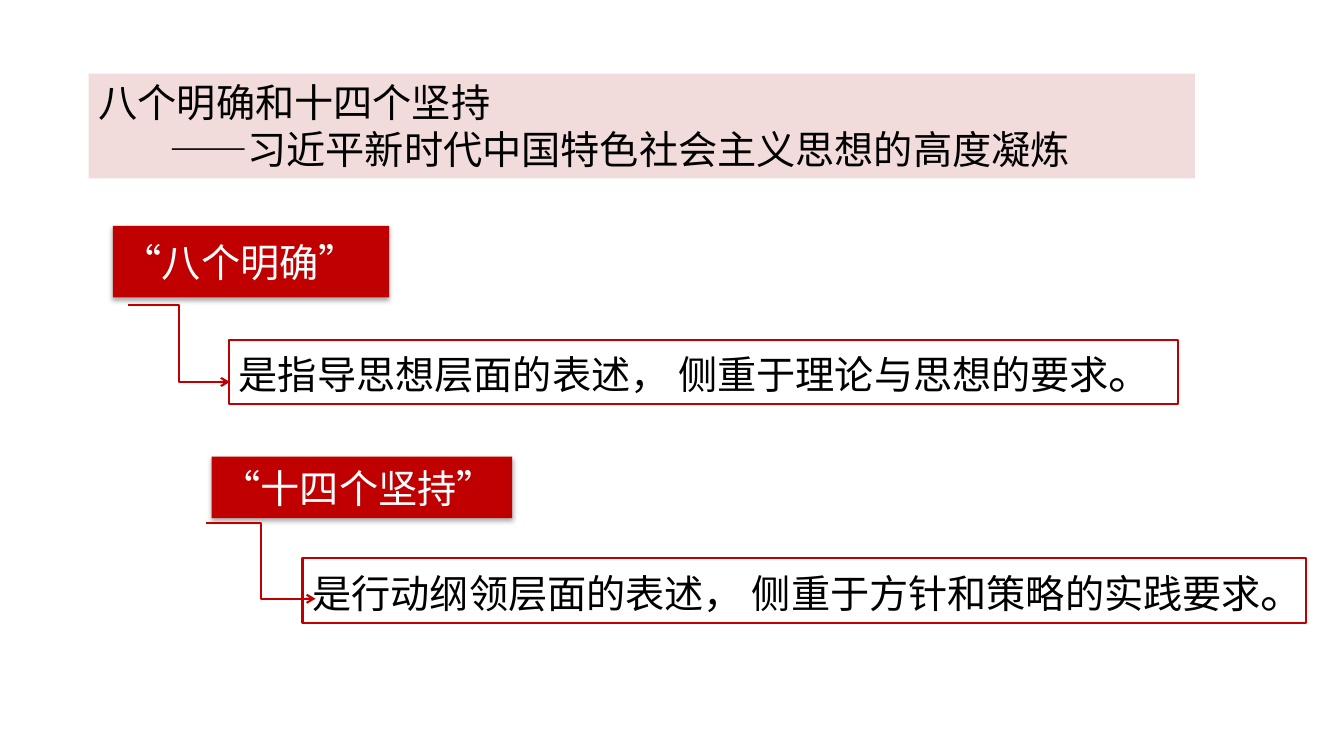
from lxml import etree
from pptx import Presentation, util as u
from pptx.dml.color import RGBColor
from pptx.enum import shapes, text
from pptx.oxml import parse_xml
from pptx.oxml.ns import nsdecls, qn

WIDE, HIGH = u.Inches(13.33), u.Inches(7.5)
FONT = "Noto Sans CJK SC"
HUES = {"red": "C00000", "pink": "F2DCDB", "black": "000000", "white": "FFFFFF"}


def col(share):
    """Percent of the slide width."""
    return int(WIDE * share / 100)


def row(share):
    """Percent of the slide height."""
    return int(HIGH * share / 100)


def hue(name):
    return RGBColor.from_string(HUES[name])


def style(run, color, size=28):
    run.font.size, run.font.name = u.Pt(size), FONT
    run.font.color.rgb = hue(color)
    props = run.font._element
    props.set("lang", "zh-CN")
    east = etree.Element(qn("a:ea"), typeface=FONT)
    props.find(qn("a:latin")).addnext(east)


def panel(slide, spot, words, color, fill=None, edge=None):
    x, y, w, h = spot
    box = slide.shapes.add_shape(
        shapes.MSO_SHAPE.RECTANGLE, col(x), row(y), col(w), row(h))
    box.shadow.inherit = False
    if fill:
        box.fill.solid()
        box.fill.fore_color.rgb = hue(fill)
    else:
        box.fill.background()
    if edge:
        box.line.color.rgb = hue(edge)
        box.line.width = u.Pt(1.5)
    else:
        box.line.fill.background()
    frame = box.text_frame
    frame.word_wrap = True
    frame.vertical_anchor = text.MSO_ANCHOR.TOP
    frame.text = words
    for para in frame.paragraphs:
        para.alignment = text.PP_ALIGN.LEFT
        for run in para.runs:
            style(run, color)
    return box


def title(slide, words):
    box = panel(slide, (6.6, 9.73, 82.3, 13.87), words, "black", "pink")
    # Indent the second line
    props = box.text_frame.paragraphs[1]._p.get_or_add_pPr()
    props.set("marL", str(u.Inches(0.7)))
    props.set("indent", "0")


def label(slide, spot, words):
    box = panel(slide, spot, words, "white", "red")
    box.text_frame.vertical_anchor = text.MSO_ANCHOR.MIDDLE
    # Soft shadow straight below
    glow = parse_xml(
        f'<a:outerShdw {nsdecls("a")} blurRad="{u.Pt(3.5)}" dist="{u.Pt(2.2)}" '
        f'dir="5400000" rotWithShape="0"><a:srgbClr val="{HUES["black"]}">'
        '<a:alpha val="32000"/></a:srgbClr></a:outerShdw>')
    box._element.spPr.find(qn("a:effectLst")).append(glow)


def detail(slide, spot, words, fill):
    box = panel(slide, spot, words, "black", fill, "red")
    box.text_frame.auto_size = text.MSO_AUTO_SIZE.SHAPE_TO_FIT_TEXT
    # Larger full stop
    stop = box.text_frame.paragraphs[0].add_run()
    stop.text = "。"
    style(stop, "black", 32)


def elbow(slide, ends):
    x1, y1, x2, y2 = ends
    link = slide.shapes.add_connector(
        shapes.MSO_CONNECTOR.ELBOW, col(x1), row(y1), col(x2), row(y2))
    link.line.color.rgb = hue("red")
    link.line.width = u.Pt(1.5)
    etree.SubElement(link.line._get_or_add_ln(), qn("a:tailEnd"), type="arrow")
    etree.SubElement(link._element.spPr, qn("a:effectLst"))


def main():
    deck = Presentation()
    deck.slide_width, deck.slide_height = WIDE, HIGH
    slide = deck.slides.add_slide(deck.slide_layouts[6])

    title(slide, "八个明确和十四个坚持\n——习近平新时代中国特色社会主义思想的高度凝炼")

    # Each step: label, its detail, and the elbow between them
    steps = [
        ((8.4, 29.87, 20.55, 9.47), "“八个明确”",
         (17.03, 44.93, 70.59, 8.53),
         "是指导思想层面的表述， 侧重于理论与思想的要求", None,
         (9.53, 40.4, 17.1, 50.53)),
        ((15.75, 60.4, 22.36, 8.13), "“十四个坚持”",
         (22.51, 73.87, 74.64, 8.53),
         "是行动纲领层面的表述， 侧重于方针和策略的实践要求", "white",
         (15.3, 69.2, 23.48, 79.2)),
    ]
    for spot, name, place, words, fill, ends in steps:
        label(slide, spot, name)
        detail(slide, place, words, fill)
        elbow(slide, ends)

    deck.save("out.pptx")


if __name__ == "__main__":
    main()
